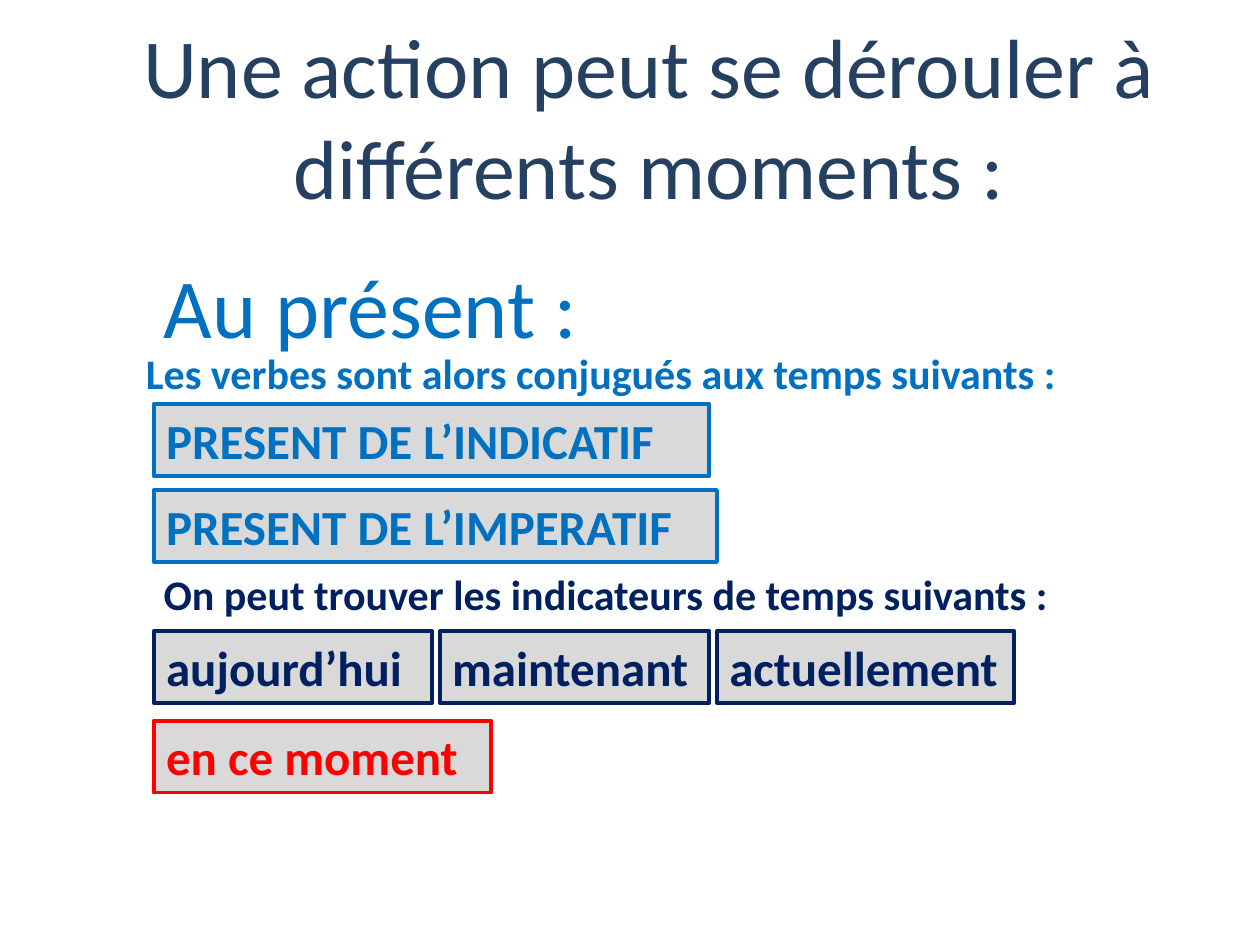
from pptx import Presentation
from pptx import util as u
from pptx.dml import color
from pptx.enum import shapes, text

BLUE, NAVY, RED = "0070C0", "002060", "FF0000"
LEFT, BOX_HEIGHT, GAP = 1.22, 0.57, 0.06

presentation = Presentation()
presentation.slide_width, presentation.slide_height = u.Inches(10), u.Inches(7.5)
slide = presentation.slides.add_slide(presentation.slide_layouts[6])


def rgb(value):
    return color.RGBColor.from_string(value)


def write(shape, words, size, ink, bold=True):
    frame = shape.text_frame
    frame.word_wrap = True
    paragraph = frame.paragraphs[0]
    paragraph.alignment = text.PP_ALIGN.LEFT
    run = paragraph.add_run()
    run.text = words
    run.font.name, run.font.size, run.font.bold = "Calibri", u.Pt(size), bold
    run.font.color.rgb = rgb(ink)
    return frame


# Title, centred in its area
title = slide.shapes.add_textbox(*map(u.Inches, (0.65, 0.29, 9, 1.25)))
frame = write(title, "Une action peut se dérouler à différents moments :", 48, "254061", False)
frame.vertical_anchor = text.MSO_ANCHOR.MIDDLE
frame.paragraphs[0].alignment = text.PP_ALIGN.CENTER

# Headings: left, top, width, height, words, size, colour, bold
headings = [
    (1.2, 1.97, 6.61, 0.91, "Au présent :", 48, BLUE, False),
    (1.06, 2.71, 8.3, 0.5, "Les verbes sont alors conjugués aux temps suivants :", 24, BLUE, True),
    (1.2, 4.46, 8.3, 0.5, "On peut trouver les indicateurs de temps suivants :", 24, NAVY, True),
]
for *place, words, size, ink, bold in headings:
    heading = slide.shapes.add_textbox(*map(u.Inches, place))
    write(heading, words, size, ink, bold)

# Rows of framed labels: top, colour, (words, width) from left to right
rows = [
    (3.21, BLUE, [("PRESENT DE L’INDICATIF", 4.41)]),
    (3.89, BLUE, [("PRESENT DE L’IMPERATIF", 4.47)]),
    (5.01, NAVY, [("aujourd’hui", 2.21), ("maintenant", 2.14), ("actuellement", 2.36)]),
    (5.72, RED, [("en ce moment", 2.68)]),
]
for top, ink, labels in rows:
    left = LEFT
    for words, width in labels:
        box = slide.shapes.add_shape(
            shapes.MSO_SHAPE.RECTANGLE, *map(u.Inches, (left, top, width, BOX_HEIGHT)))
        box.shadow.inherit = False
        box.fill.solid()
        box.fill.fore_color.rgb = rgb("D9D9D9")
        box.line.color.rgb = rgb(ink)
        box.line.width = u.Pt(2.25)
        write(box, words, 28, ink).vertical_anchor = text.MSO_ANCHOR.TOP
        left += width + GAP

presentation.save("out.pptx")
